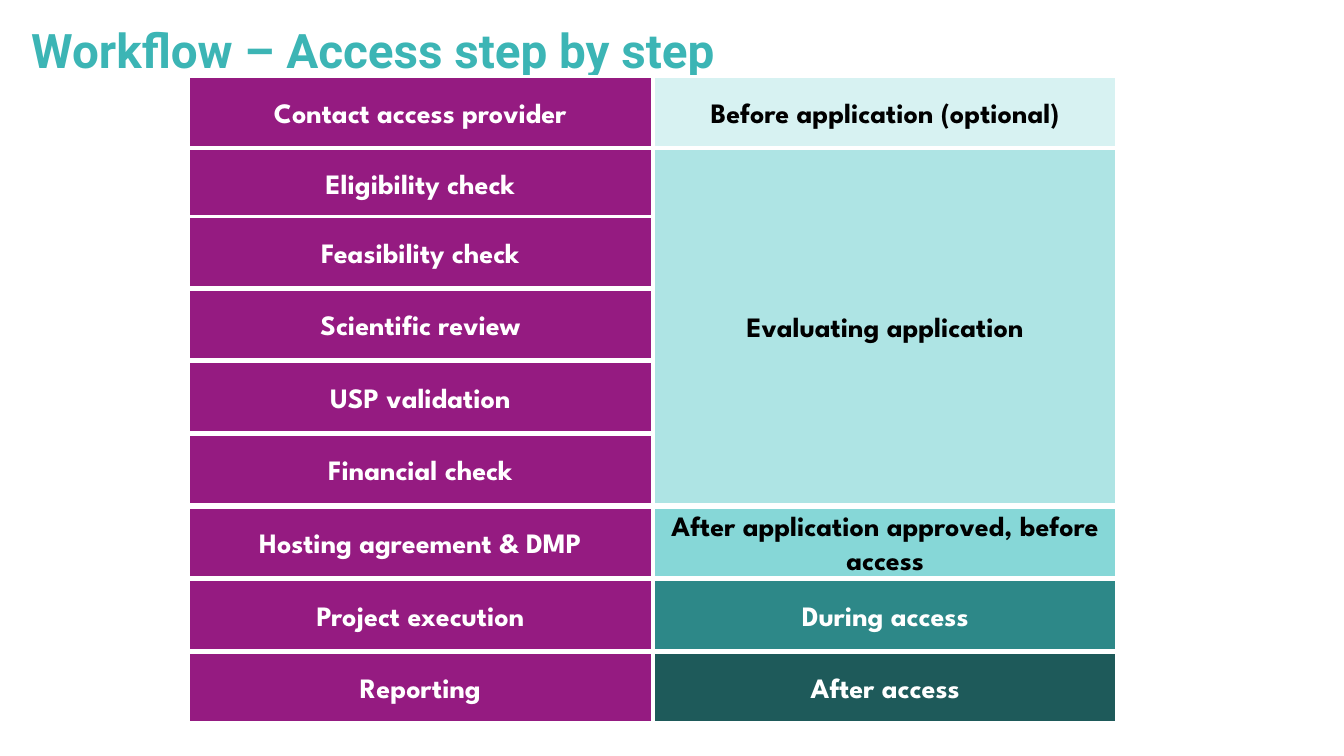
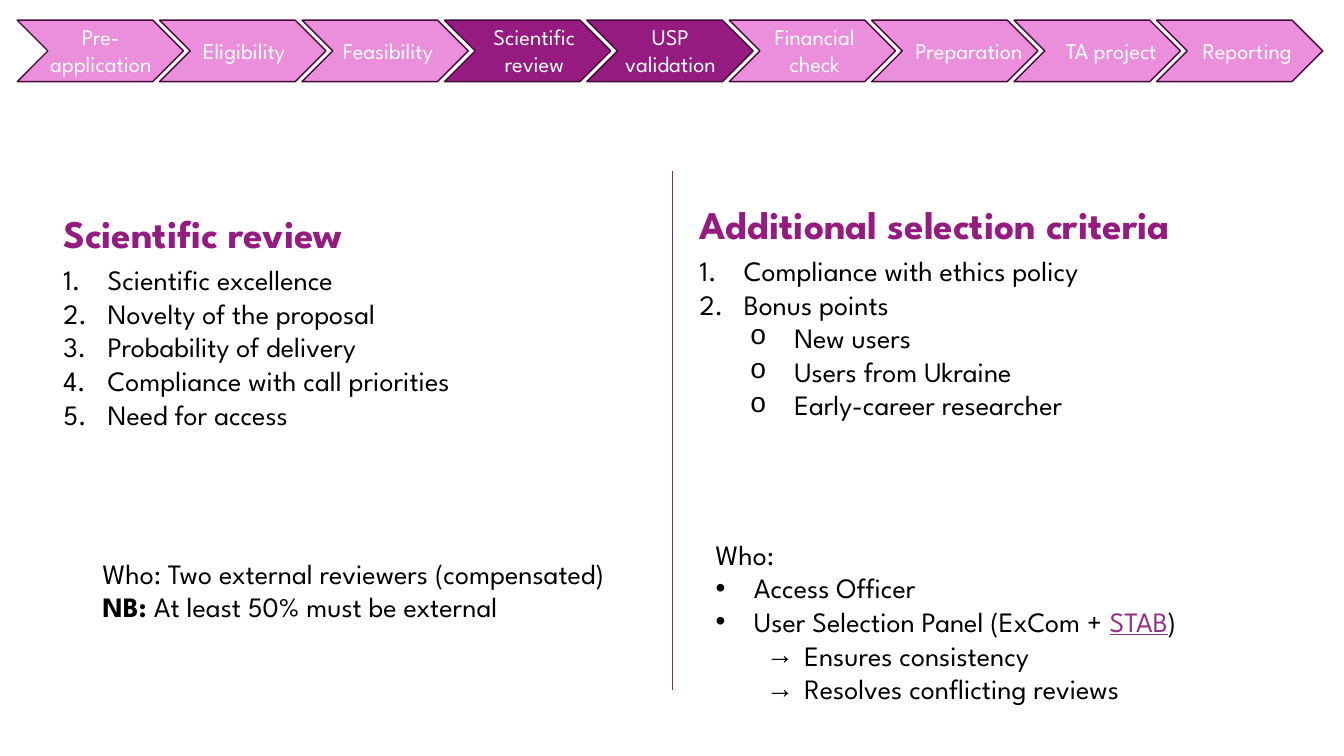
"""Build two slides on an access workflow and its scientific review step."""
from typing import NamedTuple

from lxml.etree import SubElement
from pptx import Presentation
from pptx.dml.color import RGBColor
from pptx.enum.shapes import MSO_CONNECTOR as Connector, MSO_SHAPE as Shape
from pptx.enum.text import MSO_ANCHOR as Anchor, MSO_AUTO_SIZE as AutoSize, PP_ALIGN as Align
from pptx.oxml.ns import qn
from pptx.util import Emu, Pt

EMU_PER_PX = 9144
SLIDE_SIZE = (1333, 750)

BODY_FONT = "League Spartan"
TITLE_FONT = "Roboto"
BODY_SIZE = 20
HEADING_SIZE = 28
LABEL_SIZE = 16

WHITE = RGBColor(0xFF, 0xFF, 0xFF)
BLACK = RGBColor(0x00, 0x00, 0x00)
TITLE_TEAL = RGBColor(0x3C, 0xB5, 0xB5)
PURPLE = RGBColor(0x95, 0x1B, 0x81)
PINK = RGBColor(0xEB, 0x8E, 0xDB)
DARK_PURPLE = RGBColor(0x41, 0x0C, 0x39)
LINK_PURPLE = RGBColor(0x96, 0x2E, 0x81)
TEAL_PALEST = RGBColor(0xD7, 0xF2, 0xF2)
TEAL_PALE = RGBColor(0xAE, 0xE4, 0xE4)
TEAL_LIGHT = RGBColor(0x86, 0xD7, 0xD7)
TEAL_MID = RGBColor(0x2D, 0x88, 0x88)
TEAL_DARK = RGBColor(0x1E, 0x5A, 0x5A)

STEP_LEFT, PHASE_LEFT = 187, 648
CELL_WIDTH, CELL_HEIGHT = 460, 70
ROW_TOPS = (76, 147, *range(215, 648, 72))
STEPS = (
    "Contact access provider",
    "Eligibility check",
    "Feasibility check",
    "Scientific review",
    "USP validation",
    "Financial check",
    "Hosting agreement & DMP",
    "Project execution",
    "Reporting",
)
PHASES = (
    ("Before application (optional)", 0, 0, TEAL_PALEST, BLACK),
    ("Evaluating application", 1, 5, TEAL_PALE, BLACK),
    ("After application approved, before access", 6, 6, TEAL_LIGHT, BLACK),
    ("During access", 7, 7, TEAL_MID, WHITE),
    ("After access", 8, 8, TEAL_DARK, WHITE),
)

CHEVRON_FIRST, CHEVRON_LAST = 17, 1147
CHEVRON_TOP, CHEVRON_WIDTH, CHEVRON_HEIGHT = 20, 165, 61
LABEL_TOP, LABEL_WIDTH, LABEL_HEIGHT = 18, 148, 64
STAGES = (
    ("Pre-\napplication", 100),
    ("Eligibility", 242),
    ("Feasibility", 385),
    ("Scientific\nreview", 530),
    ("USP\nvalidation", 665),
    ("Financial\ncheck", 808),
    ("Preparation", 961),
    ("TA project", 1102),
    ("Reporting", 1237),
)
CURRENT_STAGES = (3, 4)
LEVEL_INDENT = 50


class Span(NamedTuple):
    """Hold a stretch of text in one format."""

    text: str
    color: RGBColor = BLACK
    bold: bool = False
    underline: bool = False
    size: int = BODY_SIZE


class Marker(NamedTuple):
    """Hold a list marker; without a character it counts numbers."""

    hanging: int
    character: str = ""
    font: str = "Arial"
    level: int = 0


class Line(NamedTuple):
    """Hold one paragraph of a text box."""

    spans: tuple
    marker: Marker | None = None
    heading: bool = False


NUMBER = Marker(44)
CIRCLE = Marker(44, "o", "Courier New", 1)
DOT = Marker(38, "•")
ARROW = Marker(38, "→", level=1)


def px(length):
    """Turn px into EMU."""
    return Emu(round(length * EMU_PER_PX))


def box(*lengths):
    """Turn left, top, width and height into EMU."""
    return [px(length) for length in lengths]


def format_run(run, size, color, bold=False, underline=False, font=BODY_FONT):
    """Set the font of a run."""
    run.font.name = font
    run.font.size = Pt(size)
    run.font.color.rgb = color
    run.font.bold = bold
    run.font.underline = underline


def write_centred(text_frame, text, size, color, bold=False):
    """Write text centred both ways."""
    text_frame.text = text
    text_frame.vertical_anchor = Anchor.MIDDLE
    for paragraph in text_frame.paragraphs:
        paragraph.alignment = Align.CENTER
        for run in paragraph.runs:
            format_run(run, size, color, bold)


def add_block(slide, kind, place, fill, line_color, line_width):
    """Add a filled and outlined shape."""
    shape = slide.shapes.add_shape(kind, *box(*place))
    shape.shadow.inherit = False
    shape.fill.solid()
    shape.fill.fore_color.rgb = fill
    shape.line.color.rgb = line_color
    shape.line.width = Pt(line_width)
    return shape


def add_cell(slide, text, left, first_row, last_row, fill, color):
    """Add a workflow cell that spans one or more rows."""
    top = ROW_TOPS[first_row]
    height = ROW_TOPS[last_row] + CELL_HEIGHT - top
    shape = add_block(slide, Shape.RECTANGLE, (left, top, CELL_WIDTH, height), fill, WHITE, 2.25)
    shape.text_frame.word_wrap = True
    write_centred(shape.text_frame, text, BODY_SIZE, color, bold=True)


def add_title(slide, text):
    """Place and format the slide title."""
    title = slide.shapes.title
    title.left, title.top, title.width, title.height = box(21, -7, 1265, 83)
    text_frame = title.text_frame
    text_frame.text = text
    text_frame.auto_size = AutoSize.NONE
    text_frame.vertical_anchor = Anchor.TOP
    paragraph = text_frame.paragraphs[0]
    paragraph.alignment = Align.LEFT
    paragraph.line_spacing = 1.4
    format_run(paragraph.runs[0], 34, TITLE_TEAL, bold=True, font=TITLE_FONT)


def add_stage_bar(slide):
    """Add the chevrons with their labels, the current stages in a darker fill."""
    pitch = (CHEVRON_LAST - CHEVRON_FIRST) / (len(STAGES) - 1)
    for index in range(len(STAGES)):
        place = (CHEVRON_FIRST + index * pitch, CHEVRON_TOP, CHEVRON_WIDTH, CHEVRON_HEIGHT)
        fill = PURPLE if index in CURRENT_STAGES else PINK
        add_block(slide, Shape.CHEVRON, place, fill, DARK_PURPLE, 1)
    for text, centre in STAGES:
        place = (centre - LABEL_WIDTH / 2, LABEL_TOP, LABEL_WIDTH, LABEL_HEIGHT)
        label = slide.shapes.add_textbox(*box(*place))
        write_centred(label.text_frame, text, LABEL_SIZE, WHITE)


def set_marker(paragraph, marker):
    """Give a paragraph a hanging number or bullet."""
    properties = paragraph._p.get_or_add_pPr()
    properties.set("marL", str(px(marker.hanging + marker.level * LEVEL_INDENT)))
    properties.set("indent", str(-px(marker.hanging)))
    paragraph.level = marker.level
    if marker.character:
        SubElement(properties, qn("a:buFont")).set("typeface", marker.font)
        SubElement(properties, qn("a:buChar")).set("char", marker.character)
    else:
        SubElement(properties, qn("a:buFont")).set("typeface", "+mj-lt")
        SubElement(properties, qn("a:buAutoNum")).set("type", "arabicPeriod")


def add_text(slide, place, lines):
    """Add a wrapped text box with one paragraph per line."""
    text_frame = slide.shapes.add_textbox(*box(*place)).text_frame
    text_frame.word_wrap = True
    for index, line in enumerate(lines):
        paragraph = text_frame.add_paragraph() if index else text_frame.paragraphs[0]
        if line.marker:
            set_marker(paragraph, line.marker)
        if line.heading:
            paragraph.line_spacing = 0.9
            paragraph.space_after = Pt(4)
        for span in line.spans:
            run = paragraph.add_run()
            run.text = span.text
            format_run(run, span.size, span.color, span.bold, span.underline)


def heading(text):
    """Return a heading line."""
    return Line((Span(text, PURPLE, bold=True, size=HEADING_SIZE),), heading=True)


def items(marker, *texts):
    """Return plain lines that share a marker."""
    return [Line((Span(text),), marker) for text in texts]


def add_divider(slide):
    """Add the vertical line between the two columns."""
    line = slide.shapes.add_connector(Connector.STRAIGHT, *box(667, 170, 667, 685))
    line.line.color.rgb = PURPLE
    line.line.width = Pt(0.5)
    SubElement(line._element.spPr, qn("a:effectLst"))


def build_workflow(presentation):
    """Build the slide of steps and phases."""
    slide = presentation.slides.add_slide(presentation.slide_layouts[5])
    add_title(slide, "Workflow – Access step by step")
    for row, step in enumerate(STEPS):
        add_cell(slide, step, STEP_LEFT, row, row, PURPLE, WHITE)
    for text, first_row, last_row, fill, color in PHASES:
        add_cell(slide, text, PHASE_LEFT, first_row, last_row, fill, color)


def build_review(presentation):
    """Build the slide of review and selection criteria."""
    slide = presentation.slides.add_slide(presentation.slide_layouts[6])
    add_stage_bar(slide)
    add_divider(slide)
    add_text(slide, (53, 208, 600, 228), [
        heading("Scientific review"),
        *items(NUMBER, "Scientific excellence", "Novelty of the proposal",
               "Probability of delivery", "Compliance with call priorities",
               "Need for access"),
    ])
    add_text(slide, (92, 547, 570, 111), [
        *items(None, "Who: Two external reviewers (compensated)"),
        Line((Span("NB: ", bold=True), Span("At least 50% must be external"))),
    ])
    add_text(slide, (684, 199, 640, 228), [
        heading("Additional selection criteria"),
        *items(NUMBER, "Compliance with ethics policy", "Bonus points"),
        *items(CIRCLE, "New users", "Users from Ukraine", "Early-career researcher"),
    ])
    panel = (Span("User Selection Panel (ExCom + "),
             Span("STAB", LINK_PURPLE, underline=True), Span(")"))
    add_text(slide, (700, 528, 590, 178), [
        *items(None, "Who:"),
        *items(DOT, "Access Officer"),
        Line(panel, DOT),
        *items(ARROW, "Ensures consistency", "Resolves conflicting reviews"),
    ])


def main():
    """Build and save the presentation."""
    presentation = Presentation()
    presentation.slide_width, presentation.slide_height = box(*SLIDE_SIZE)
    build_workflow(presentation)
    build_review(presentation)
    presentation.save("out.pptx")


if __name__ == "__main__":
    main()
